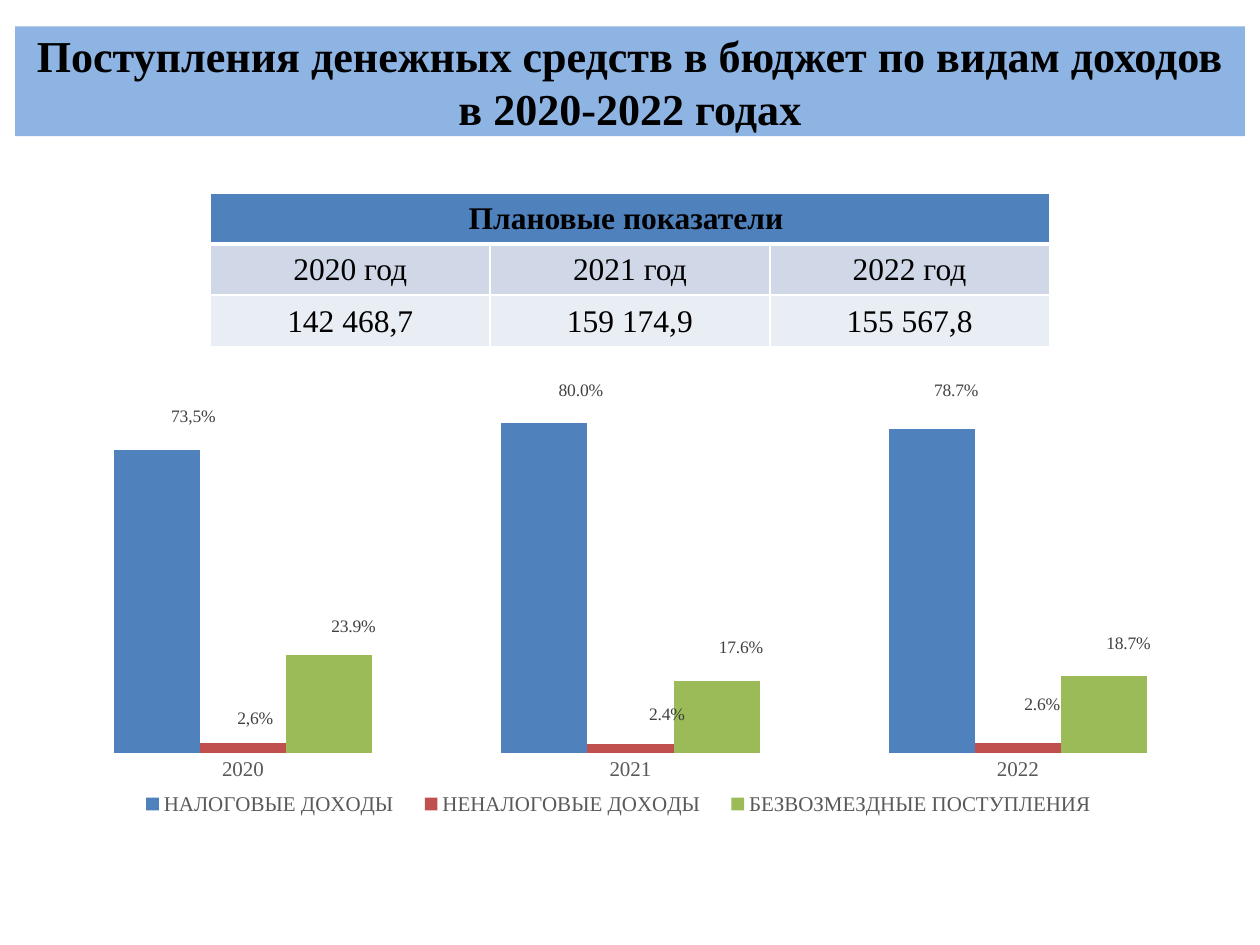
from lxml.etree import SubElement
from pptx import Presentation
from pptx.chart.data import CategoryChartData
from pptx.dml.color import RGBColor
from pptx.enum.chart import XL_CHART_TYPE as ChartType, XL_LABEL_POSITION as LabelPlace
from pptx.enum.chart import XL_LEGEND_POSITION as LegendPlace, XL_TICK_MARK as TickMark
from pptx.enum.text import MSO_ANCHOR as Anchor, MSO_AUTO_SIZE as AutoSize, PP_ALIGN as Align
from pptx.oxml import parse_xml
from pptx.oxml.ns import nsdecls, qn
from pptx.util import Inches, Pt

TITLE = "Поступления денежных средств в бюджет по видам доходов\vв 2020-2022 годах"
YEARS = ["2020", "2021", "2022"]
PLAN = [
    (["Плановые показатели "], "4F81BD"),
    ([f"{year} год" for year in YEARS], "D0D8E8"),
    (["142 468,7", "159 174,9", "155 567,8"], "E9EDF4"),
]
INCOME = [
    ("НАЛОГОВЫЕ ДОХОДЫ", "4F81BD", [0.735, 0.8, 0.787], "73,5%",
     [(0.03, -0.04), (0.03, -0.04), (0.02, -0.05)]),
    ("НЕНАЛОГОВЫЕ ДОХОДЫ", "C0504D", [0.026, 0.024, 0.026], "2,6%",
     [(0.01, -0.02), (0.03, -0.03), (0.02, -0.05)]),
    ("БЕЗВОЗМЕЗДНЫЕ ПОСТУПЛЕНИЯ", "9BBB59", [0.239, 0.176, 0.187], None,
     [(0.02, -0.03), (0.02, -0.04), (0.02, -0.04)]),
]


def color(value):
    """Turn a hex string into a colour."""
    return RGBColor.from_string(value)


def assign(target, values):
    """Set attributes from a dict of format values."""
    for name, value in values.items():
        setattr(target, name, value)


def layout(target="", edge=False, **sides):
    """Make a manual chart layout from fractions of the chart."""
    parts = f'<c:layoutTarget val="{target}"/>' if target else ""
    parts += '<c:xMode val="edge"/><c:yMode val="edge"/>' if edge else ""
    parts += "".join(f'<c:{side} val="{value}"/>' for side, value in sides.items())
    return parse_xml(f"<c:layout {nsdecls('c')}><c:manualLayout>{parts}</c:manualLayout></c:layout>")


def place(parent, index, new_layout):
    """Put a layout into a chart part in place of any old one."""
    for old in parent.findall(qn("c:layout")):
        parent.remove(old)
    parent.insert(index, new_layout)


class SlideBuilder:
    """Hold the style and the current slide."""

    font_name = "Times New Roman"

    def __init__(self, page):
        """Keep the page to build on."""
        self.page = page

    def style(self, font, size, ink="000000", bold=False):
        """Format a font in the slide's typeface."""
        assign(font, {"name": self.font_name, "size": Pt(size), "bold": bold})
        font.color.rgb = color(ink)

    def title(self, text, box, fill, size):
        """Fill and format the title placeholder."""
        shape = self.page.shapes.title
        assign(shape, dict(zip(("left", "top", "width", "height"), map(Inches, box))))
        shape.fill.solid()
        shape.fill.fore_color.rgb = color(fill)
        frame = shape.text_frame
        frame.text = text
        assign(frame, {"auto_size": AutoSize.NONE, "vertical_anchor": Anchor.MIDDLE, "word_wrap": True})
        para = frame.paragraphs[0]
        para.alignment = Align.CENTER
        for span in para.runs:
            self.style(span.font, size, bold=True)

    def borders(self, cell, bottom):
        """Draw white lines round a cell."""
        props = cell._tc.get_or_add_tcPr()
        for index, (side, width) in enumerate({"L": 1, "R": 1, "T": 1, "B": bottom}.items()):
            line = props.makeelement(qn(f"a:ln{side}"), {"w": str(Pt(width))})
            SubElement(SubElement(line, qn("a:solidFill")), qn("a:srgbClr"), val="FFFFFF")
            props.insert(index, line)

    def table(self, rows, box, columns, size):
        """Add a table whose first row is one merged heading."""
        table = self.page.shapes.add_table(len(rows), columns, *map(Inches, box)).table
        for row, (texts, fill) in enumerate(rows):
            for column in range(columns):
                cell = table.cell(row, column)
                cell.fill.solid()
                cell.fill.fore_color.rgb = color(fill)
                self.borders(cell, 1 if row else 3)
                assign(cell, {"margin_left": Inches(0.01), "margin_right": Inches(0.01),
                              "margin_top": Inches(0.01), "margin_bottom": 0,
                              "vertical_anchor": Anchor.MIDDLE})
                if column < len(texts):
                    cell.text = texts[column]
                    para = cell.text_frame.paragraphs[0]
                    para.alignment = Align.CENTER
                    self.style(para.runs[0].font, size, bold=row == 0)
        table.cell(0, 0).merge(table.cell(0, columns - 1))

    def point_label(self, point, text, size, ink):
        """Label one column, with its own text if given."""
        label = point.data_label
        if text:
            label.text_frame.text = text
            self.style(label.text_frame.paragraphs[0].runs[0].font, size, ink)
        else:
            self.style(label.font, size, ink)
        label.position = LabelPlace.OUTSIDE_END

    def chart(self, categories, groups, box):
        """Add a clustered column chart with shifted labels."""
        data = CategoryChartData(number_format="0.0%")
        data.categories = categories
        for name, _, values, _, _ in groups:
            data.add_series(name, values)
        chart = self.page.shapes.add_chart(ChartType.COLUMN_CLUSTERED, *map(Inches, box), data).chart
        assign(chart, {"has_title": False, "has_legend": True})
        assign(chart.font, {"name": "Calibri", "size": Pt(10)})
        assign(chart.legend, {"position": LegendPlace.BOTTOM, "include_in_layout": False})
        self.style(chart.legend.font, 12, "595959")
        place(chart.legend._element, 1, layout(edge=True, x=0.08, y=0.9, w=0.82, h=0.08))
        axis = chart.category_axis
        assign(axis, {"major_tick_mark": TickMark.NONE, "minor_tick_mark": TickMark.NONE})
        axis.format.line.fill.background()
        self.style(axis.tick_labels.font, 12, "595959")
        assign(chart.value_axis, {"visible": False, "has_major_gridlines": False,
                                  "minimum_scale": 0, "maximum_scale": 0.9})
        plot = chart.plots[0]
        assign(plot, {"gap_width": 150, "overlap": 0, "vary_by_categories": False})
        place(chart._chartSpace.chart.plotArea, 0,
              layout("inner", edge=True, x=0.02, y=0.02, w=0.96, h=0.81))
        for series, (_, fill, _, first_text, shifts) in zip(plot.series, groups):
            series.format.fill.solid()
            series.format.fill.fore_color.rgb = color(fill)
            labels = series.data_labels
            assign(labels, {"show_value": True, "number_format": "0.0%",
                            "number_format_is_linked": False, "position": LabelPlace.OUTSIDE_END})
            self.style(labels.font, 10, "404040")
            for index in range(len(shifts)):
                self.point_label(series.points[index], None if index else first_text, 10, "404040")
            for node, (x, y) in zip(series._element.findall(f".//{qn('c:dLbl')}"), shifts):
                place(node, 1, layout(x=x, y=y))
            for leader in labels._element.findall(qn("c:showLeaderLines")):
                labels._element.remove(leader)
            SubElement(labels._element, qn("c:showLeaderLines"), val="0")


def main():
    """Build the slide and save it."""
    deck = Presentation()
    assign(deck, {"slide_width": Inches(10), "slide_height": Inches(7.5)})
    builder = SlideBuilder(deck.slides.add_slide(deck.slide_layouts[5]))
    builder.title(TITLE, (0.12, 0.21, 9.76, 0.87), "8EB4E3", 25.2)
    builder.table(PLAN, (1.67, 1.53, 6.66, 1.22), 3, 18)
    builder.chart(YEARS, INCOME, (0.2, 2.96, 9.61, 3.64))
    deck.save("out.pptx")


if __name__ == "__main__":
    main()
